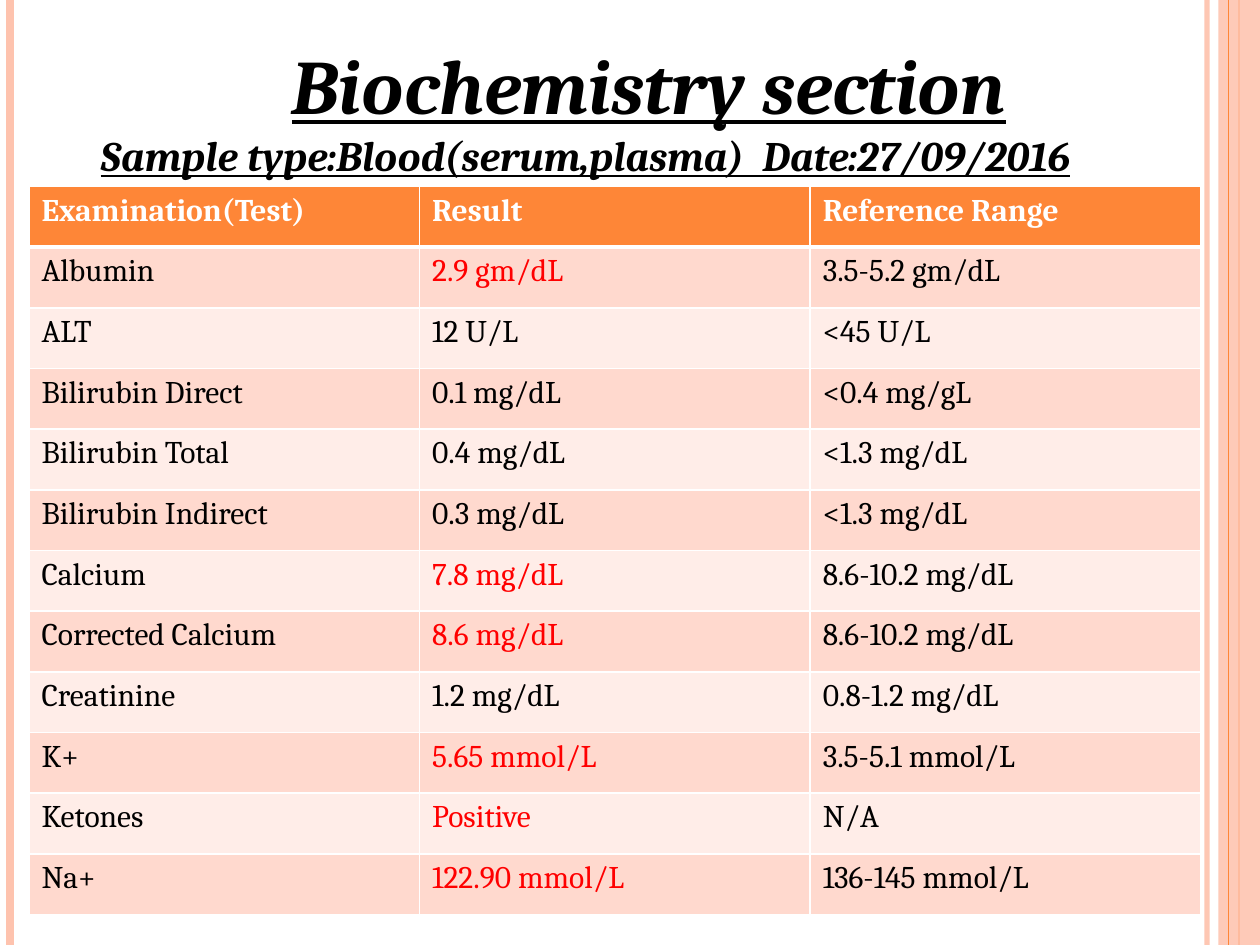
from lxml.etree import SubElement
from pptx import Presentation
from pptx.dml.color import RGBColor
from pptx.enum.shapes import MSO_CONNECTOR, MSO_SHAPE
from pptx.enum.text import MSO_ANCHOR, PP_ALIGN
from pptx.oxml.ns import qn
from pptx.util import Inches, Pt

W, H = 10, 7.5
FONT = "Cambria"
ORANGE, PEACH, WHITE, BLACK, RED = "FE8637", "FEC3AE", "FFFFFF", "000000", "FF0000"
BANDS = ("FFD9CE", "FFEDE8")
HEADERS = ("Examination(Test)", "Result", "Reference Range")
RESULTS = [
    ("Albumin", "2.9 gm/dL", "3.5-5.2 gm/dL"),
    ("ALT", "12 U/L", "<45 U/L"),
    ("Bilirubin Direct", "0.1 mg/dL", "<0.4 mg/gL"),
    ("Bilirubin Total", "0.4 mg/dL", "<1.3 mg/dL"),
    ("Bilirubin Indirect", "0.3 mg/dL", "<1.3 mg/dL"),
    ("Calcium", "7.8 mg/dL", "8.6-10.2 mg/dL"),
    ("Corrected Calcium", "8.6 mg/dL", "8.6-10.2 mg/dL"),
    ("Creatinine", "1.2 mg/dL", "0.8-1.2 mg/dL"),
    ("K+", "5.65 mmol/L", "3.5-5.1 mmol/L"),
    ("Ketones", "Positive", "N/A"),
    ("Na+", "122.90 mmol/L", "136-145 mmol/L"),
]
ABNORMAL = {"Albumin", "Calcium", "Corrected Calcium", "K+", "Ketones", "Na+"}


def rgb(value):
    return RGBColor.from_string(value)


def set_alpha(fill, percent):
    color = fill._xPr.find(qn("a:solidFill"))[0]
    SubElement(color, qn("a:alpha")).set("val", str(percent * 1000))


def format_text(p, size, color, bold=False, slanted=False):
    for r in p.runs:
        r.font.name = FONT
        r.font.size = Pt(size)
        r.font.bold = bold
        r.font.italic = slanted
        r.font.underline = slanted
        r.font.color.rgb = rgb(color)


def add_stripe(s, x, color, width, alpha=100):
    line = s.shapes.add_connector(
        MSO_CONNECTOR.STRAIGHT, Inches(x), 0, Inches(x), Inches(H))
    line.line.color.rgb = rgb(color)
    line.line.width = Pt(width)
    if alpha < 100:
        set_alpha(line.line.fill, alpha)
    SubElement(line._element.spPr, qn("a:effectLst"))


def add_frame(s, left, right, band):
    add_stripe(s, right, PEACH, 3, 93)
    add_stripe(s, left, PEACH, 4.5)
    add_stripe(s, W - band / 2, ORANGE, 1.5)
    bar = s.shapes.add_shape(
        MSO_SHAPE.RECTANGLE, Inches(W - band), 0, Inches(band), Inches(H))
    bar.shadow.inherit = False
    bar.fill.solid()
    bar.fill.fore_color.rgb = rgb(PEACH)
    set_alpha(bar.fill, 87)
    bar.line.fill.background()
    add_stripe(s, W - band * 3 / 4, ORANGE, 0.75)


def add_heading(s, x, y, w, h):
    tf = s.shapes.add_textbox(Inches(x), Inches(y), Inches(w), Inches(h)).text_frame
    tf.word_wrap = True
    tf.vertical_anchor = MSO_ANCHOR.BOTTOM
    p = tf.paragraphs[0]
    p.text = "Biochemistry section"
    p.alignment = PP_ALIGN.CENTER
    format_text(p, 44, BLACK, True, True)
    p = tf.add_paragraph()
    p.text = "Sample type:Blood(serum,plasma)  Date:27/09/2016"
    p.alignment = PP_ALIGN.LEFT
    format_text(p, 24, BLACK, True, True)


def set_borders(cell, widths):
    tcPr = cell._tc.get_or_add_tcPr()
    for i, (side, width) in enumerate(widths.items()):
        ln = tcPr.makeelement(qn(f"a:ln{side}"), {"w": str(Pt(width))})
        fill = SubElement(ln, qn("a:solidFill"))
        SubElement(fill, qn("a:srgbClr")).set("val", WHITE)
        tcPr.insert(i, ln)


def fill_cell(cell, text, fill, color, bold, top, bottom):
    cell.text = text
    format_text(cell.text_frame.paragraphs[0], 18, color, bold)
    cell.fill.solid()
    cell.fill.fore_color.rgb = rgb(fill)
    set_borders(cell, {"L": 1, "R": 1, "T": top, "B": bottom})


def add_results(s, x, y, w, h):
    rows = [HEADERS, *RESULTS]
    table = s.shapes.add_table(
        len(rows), len(HEADERS), Inches(x), Inches(y), Inches(w), Inches(h)).table
    for row in table.rows:
        row.height = Inches(h / len(rows))
    for i, values in enumerate(rows):
        for j, text in enumerate(values):
            cell = table.cell(i, j)
            if i == 0:
                fill_cell(cell, text, ORANGE, WHITE, True, 1, 3)
            else:
                color = RED if j == 1 and values[0] in ABNORMAL else BLACK
                fill_cell(cell, text, BANDS[(i - 1) % 2], color, False,
                          3 if i == 1 else 1, 1)


def main():
    prs = Presentation()
    prs.slide_width, prs.slide_height = Inches(W), Inches(H)
    s = prs.slides.add_slide(prs.slide_layouts[6])
    s.background.fill.solid()
    s.background.fill.fore_color.rgb = rgb(WHITE)
    add_frame(s, 0.08, 9.58, 0.33)
    add_heading(s, 0.7, 0.23, 8.9, 1.25)
    add_results(s, 0.23, 1.48, 9.3, 5.78)
    prs.save("out.pptx")


if __name__ == "__main__":
    main()
